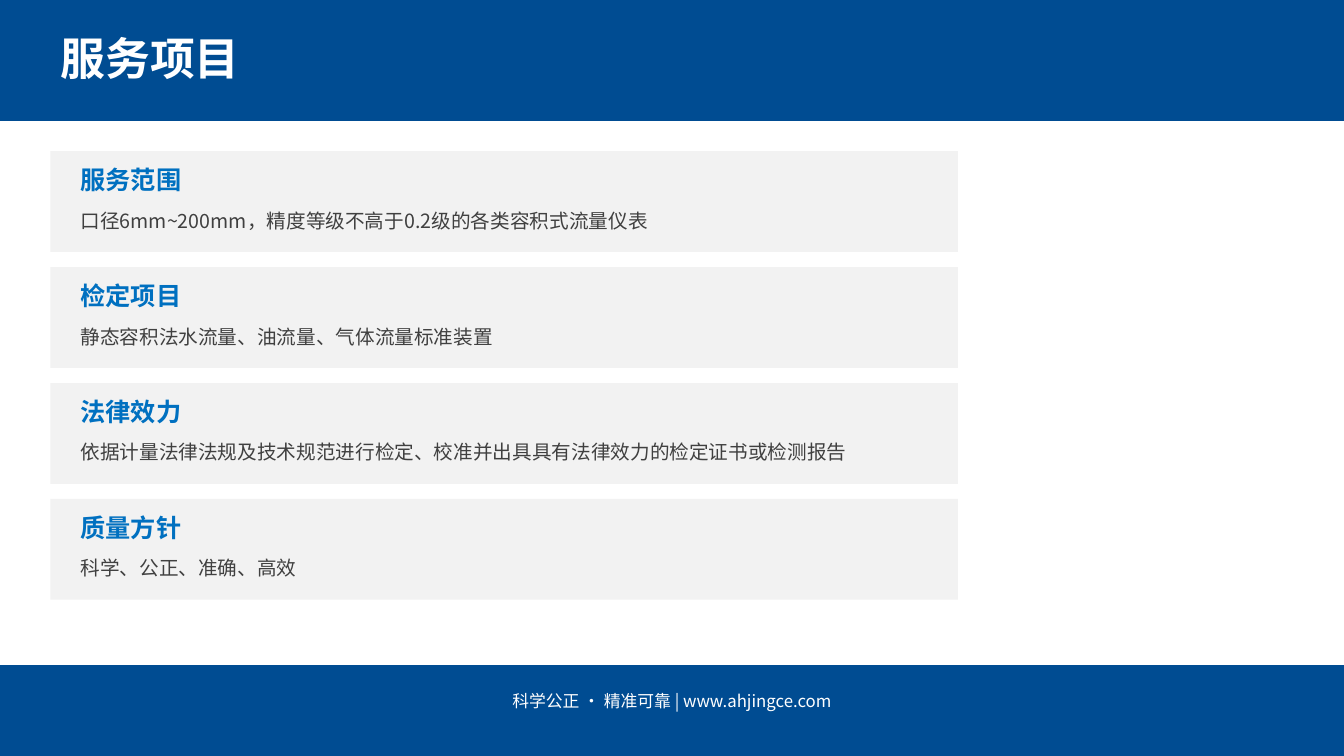
from pptx import Presentation
from pptx.dml.color import RGBColor
from pptx.enum.shapes import MSO_SHAPE
from pptx.enum.text import MSO_ANCHOR, MSO_AUTO_SIZE, PP_ALIGN
from pptx.util import Inches, Pt

RECTANGLE = MSO_SHAPE.RECTANGLE
TOP = MSO_ANCHOR.TOP
GROW = MSO_AUTO_SIZE.SHAPE_TO_FIT_TEXT
LEFT, CENTER = PP_ALIGN.LEFT, PP_ALIGN.CENTER

# Content
TITLE = "服务项目"
SERVICES = [
    ("服务范围", "口径6mm~200mm，精度等级不高于0.2级的各类容积式流量仪表"),
    ("检定项目", "静态容积法水流量、油流量、气体流量标准装置"),
    ("法律效力", "依据计量法律法规及技术规范进行检定、校准并出具具有法律效力的检定证书或检测报告"),
    ("质量方针", "科学、公正、准确、高效"),
]
FOOTER = "科学公正 · 精准可靠 | www.ahjingce.com"

# Style and grid, in inches
FONT = "Noto Sans CJK SC"
COLORS = {"band": "004C92", "card": "F2F2F2", "heading": "0070C0",
          "body": "404040", "light": "FFFFFF"}
WIDTH, HEIGHT = 13.33, 7.5
HEADER_HEIGHT, FOOTER_HEIGHT = 1.2, 0.9
MARGIN, CARD_TOP, CARD_WIDTH, CARD_HEIGHT, CARD_GAP = 0.5, 1.5, 9, 1, 0.15
TEXT_LEFT, TEXT_WIDTH = MARGIN + 0.2, 8.5


def add_block(slide, left, top, width, height, color):
    block = slide.shapes.add_shape(
        RECTANGLE, Inches(left), Inches(top), Inches(width), Inches(height))
    block.fill.solid()
    block.fill.fore_color.rgb = RGBColor.from_string(COLORS[color])
    block.line.fill.background()
    block.shadow.inherit = False


def write_text(shape, text, size, color, bold=False, align=LEFT):
    frame = shape.text_frame
    frame.text = text
    frame.word_wrap = True
    frame.vertical_anchor = TOP
    frame.auto_size = GROW
    paragraph = frame.paragraphs[0]
    paragraph.alignment = align
    font = paragraph.font
    font.name, font.size, font.bold = FONT, Pt(size), bold
    font.color.rgb = RGBColor.from_string(COLORS[color])


def add_text(slide, left, top, width, height, *style, **options):
    box = slide.shapes.add_textbox(
        Inches(left), Inches(top), Inches(width), Inches(height))
    write_text(box, *style, **options)


presentation = Presentation()
presentation.slide_width, presentation.slide_height = Inches(WIDTH), Inches(HEIGHT)
slide = presentation.slides.add_slide(presentation.slide_layouts[5])

# Header: the title is moved in front of its band
add_block(slide, 0, 0, WIDTH, HEADER_HEIGHT, "band")
title = slide.shapes.title
title.left, title.top = Inches(MARGIN), Inches(0.25)
title.width, title.height = Inches(CARD_WIDTH), Inches(0.64)
write_text(title, TITLE, 32, "light", bold=True)
slide.shapes._spTree.append(title._element)

# Service cards
for row, (heading, body) in enumerate(SERVICES):
    top = CARD_TOP + row * (CARD_HEIGHT + CARD_GAP)
    add_block(slide, MARGIN, top, CARD_WIDTH, CARD_HEIGHT, "card")
    add_text(slide, TEXT_LEFT, top + 0.08, TEXT_WIDTH, 0.4, heading, 18, "heading", bold=True)
    add_text(slide, TEXT_LEFT, top + 0.52, TEXT_WIDTH, 0.34, body, 14, "body")

# Footer
footer_top = HEIGHT - FOOTER_HEIGHT
add_block(slide, 0, footer_top, WIDTH, FOOTER_HEIGHT, "band")
add_text(slide, 0, footer_top + 0.2, WIDTH, 0.3, FOOTER, 12, "light", align=CENTER)

presentation.save("out.pptx")
